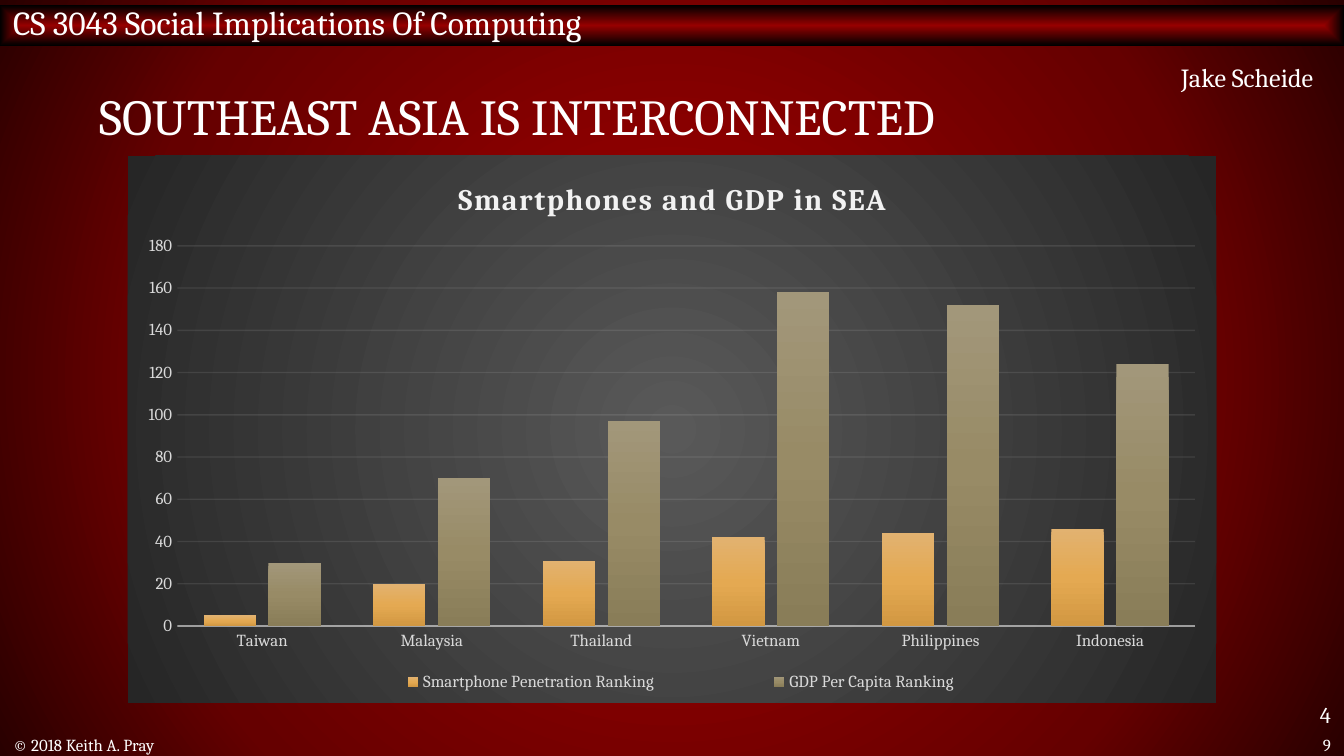
from pptx import Presentation
from pptx.chart.data import CategoryChartData
from pptx.dml.color import RGBColor
from pptx.enum.chart import XL_CHART_TYPE as CT, XL_LEGEND_POSITION as LP, XL_TICK_MARK as TM
from pptx.enum.shapes import MSO_SHAPE
from pptx.enum.text import MSO_ANCHOR as ANC, PP_ALIGN as AL
from pptx.oxml import parse_xml
from pptx.oxml.ns import nsdecls, qn
from pptx.util import Inches, Pt

FONT = "Cambria"
COLORS = {"text": "FFFFFF", "label": "D9D9D9", "line": "F2F2F2"}
GRADIENTS = {
    "background": [(17, "960000"), (71, "650000"), (100, "290000")],
    "header": [(0, "960000"), (100, "000000")],
    "chart": [(0, "595959"), (100, "262626")],
    "phones": [(0, "E2B270"), (50, "E4A952"), (100, "D29842")],
    "gdp": [(0, "A2977A"), (50, "988B66"), (100, "897D58")],
}
CHART_W, CHART_H = 8.1, 4.07
COUNTRIES = ["Taiwan", "Malaysia", "Thailand", "Vietnam", "Philippines", "Indonesia"]
RANKINGS = [
    ("Smartphone Penetration Ranking", [5, 20, 31, 42, 44, 46], "phones"),
    ("GDP Per Capita Ranking", [30, 70, 97, 158, 152, 124], "gdp"),
]


def gradient_xml(name, path=None):
    """Return gradient XML, centred along a path or running downwards."""
    stops = "".join(f'<a:gs pos="{pos * 1000}"><a:srgbClr val="{color}"/></a:gs>'
                    for pos, color in GRADIENTS[name])
    if path:
        flow = (f'<a:path path="{path}"><a:fillToRect l="50000" t="50000" '
                'r="50000" b="50000"/></a:path>')
    else:
        flow = '<a:lin ang="5400000" scaled="0"/>'
    return (f'<a:gradFill {nsdecls("a")} rotWithShape="1">'
            f'<a:gsLst>{stops}</a:gsLst>{flow}</a:gradFill>')


def paint(fill, owner, name, path=None):
    """Give a fill one of the named gradients."""
    fill.gradient()
    old = next(owner.iter(qn("a:gradFill")))
    old.getparent().replace(old, parse_xml(gradient_xml(name, path)))


def set_font(font, size, color="text"):
    """Set typeface, size and colour."""
    font.name = FONT
    font.size = Pt(size)
    font.color.rgb = RGBColor.from_string(COLORS[color])


def write(s, text, size, align=AL.LEFT, anchor=ANC.MIDDLE, spacing=None):
    """Write one line of text into a shape."""
    tf = s.text_frame
    tf.word_wrap = True
    tf.vertical_anchor = anchor
    p = tf.paragraphs[0]
    p.alignment = align
    p.line_spacing = spacing
    r = p.add_run()
    r.text = text
    set_font(r.font, size)


def add_text(slide, box, text, size, **options):
    """Add a text box."""
    write(slide.shapes.add_textbox(*map(Inches, box)), text, size, **options)


def add_header(slide, text):
    """Add the gradient bar with the course name."""
    s = slide.shapes.add_shape(MSO_SHAPE.RECTANGLE, *map(Inches, (0, 0.04, 10, 0.3)))
    s.shadow.inherit = False
    s.line.fill.background()
    paint(s.fill, s._element.spPr, "header", "shape")
    s.text_frame.margin_top = 0
    write(s, text, 18)


def set_line(line, width, alpha):
    """Style a line with a partly transparent colour."""
    line.width = Pt(width)
    line.color.rgb = RGBColor.from_string(COLORS["line"])
    color = next(line._get_or_add_ln().iter(qn("a:srgbClr")))
    color.append(parse_xml(f'<a:alpha {nsdecls("a")} val="{alpha * 1000}"/>'))


def place(part, index, inner=False, **edges):
    """Place a chart part by hand, with its edges in inches."""
    for old in part.findall(qn("c:layout")):
        part.remove(old)
    full = {"x": CHART_W, "y": CHART_H, "w": CHART_W, "h": CHART_H}
    target = '<c:layoutTarget val="inner"/>' if inner else ""
    modes = "".join(f'<c:{k}Mode val="edge"/>' for k in "xy")
    values = "".join(f'<c:{k} val="{v / full[k]:.4f}"/>' for k, v in edges.items())
    part.insert(index, parse_xml(
        f'<c:layout {nsdecls("c")}><c:manualLayout>{target}{modes}{values}'
        '</c:manualLayout></c:layout>'))


def add_title(chart, text):
    """Add the bold, letter-spaced chart title."""
    title = chart.chart_title
    r = title.text_frame.paragraphs[0].add_run()
    r.text = text
    set_font(r.font, 16, "line")
    r.font.bold = True
    r.font._element.set("spc", "100")
    title.include_in_layout = False
    place(title._element, 1, x=2.42, y=0.14)


def add_legend(chart):
    """Add the legend along the bottom."""
    chart.has_legend = True
    legend = chart.legend
    legend.position = LP.BOTTOM
    legend.include_in_layout = False
    set_font(legend.font, 9, "label")
    place(legend._element, 1, x=1.23, y=3.79, w=5.77, h=0.25)


def style_axes(chart):
    """Style both axes and the gridlines."""
    for axis in (chart.category_axis, chart.value_axis):
        axis.major_tick_mark = axis.minor_tick_mark = TM.NONE
        set_font(axis.tick_labels.font, 9, "label")
    set_line(chart.category_axis.format.line, 1, 54)
    values = chart.value_axis
    values.minimum_scale, values.maximum_scale, values.major_unit = 0, 180, 20
    values.format.line.fill.background()
    set_line(values.major_gridlines.format.line, 0.75, 10)


def add_chart(slide):
    """Add the clustered column chart of both rankings."""
    data = CategoryChartData()
    data.categories = COUNTRIES
    for name, values, _ in RANKINGS:
        data.add_series(name, values)
    box = map(Inches, (0.95, 1.16, CHART_W, CHART_H))
    chart = slide.shapes.add_chart(CT.COLUMN_CLUSTERED, *box, data).chart
    set_font(chart.font, 10)
    space = chart._chartSpace
    space.find(qn("c:txPr")).addprevious(parse_xml(
        f'<c:spPr {nsdecls("c", "a")}>{gradient_xml("chart", "circle")}'
        '<a:ln><a:noFill/></a:ln></c:spPr>'))
    add_title(chart, "Smartphones and GDP in SEA")
    style_axes(chart)
    plot = chart.plots[0]
    plot.gap_width, plot.overlap, plot.vary_by_categories = 100, -24, False
    for series, (_, _, gradient) in zip(plot.series, RANKINGS):
        paint(series.format.fill, series._element, gradient)
    add_legend(chart)
    area = next(space.iter(qn("c:plotArea")))
    place(area, 0, inner=True, x=0.37, y=0.67, w=7.57, h=2.83)


def main():
    """Build the slide and save it."""
    prs = Presentation()
    prs.slide_width = Inches(10)
    prs.slide_height = prs.slide_width * 9 // 16
    slide = prs.slides.add_slide(prs.slide_layouts[6])
    paint(slide.background.fill, slide._element, "background", "circle")
    add_header(slide, "CS 3043 Social Implications Of Computing")
    add_text(slide, (0.64, 0.4, 8.73, 1), "SOUTHEAST ASIA IS INTERCONNECTED", 27, spacing=0.8)
    add_text(slide, (0, 5.46, 6.08, 0.16), "© 2018 Keith A. Pray", 9)
    add_text(slide, (9.32, 5.46, 0.68, 0.16), "9", 9, align=AL.RIGHT)
    add_chart(slide)
    add_text(slide, (7.49, 0.41, 2.38, 0.34), "Jake Scheide", 14, align=AL.RIGHT, anchor=ANC.TOP)
    add_text(slide, (0, 5.17, 10, 0.3), "4", 12, align=AL.RIGHT, anchor=ANC.TOP)
    prs.save("out.pptx")


if __name__ == "__main__":
    main()
